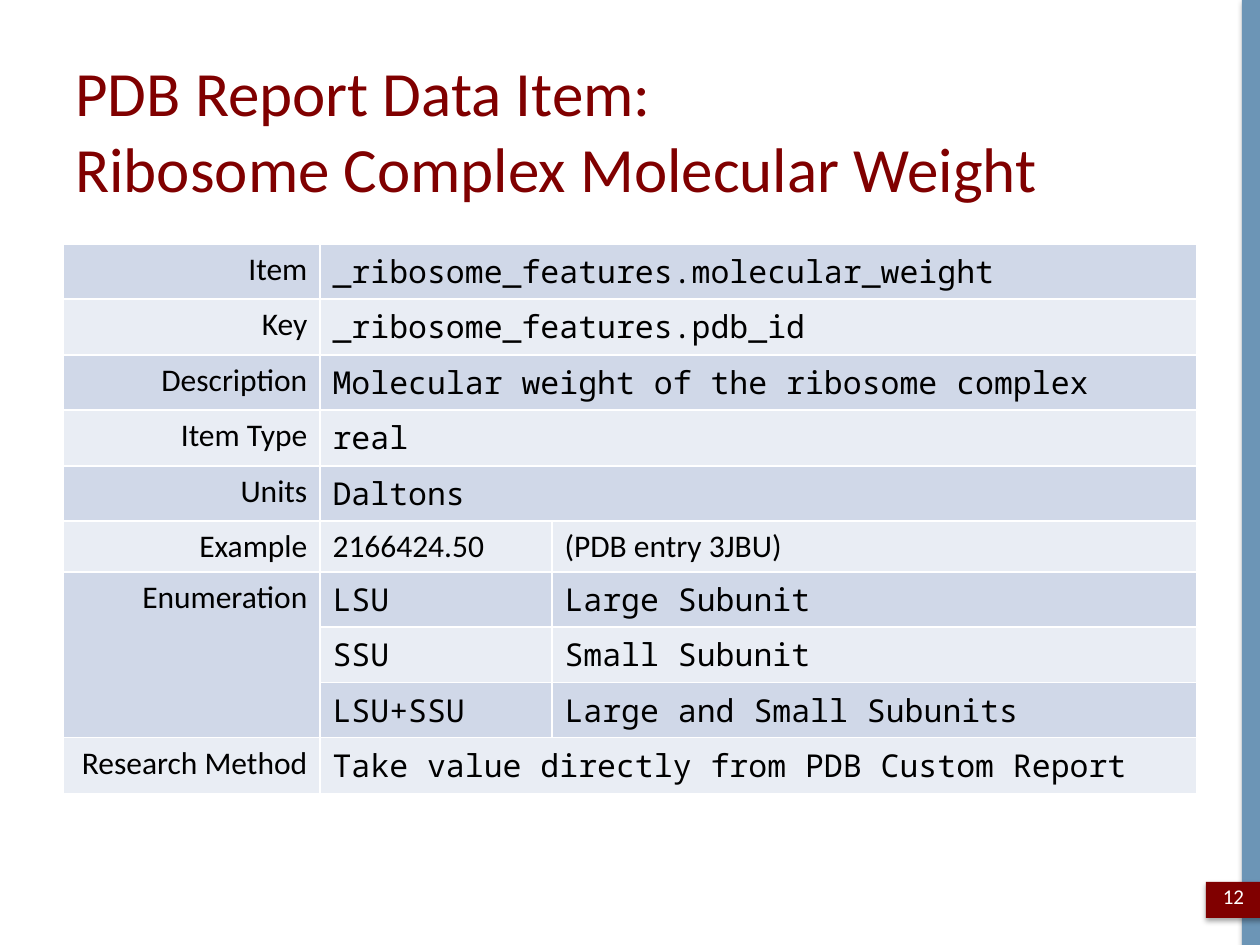
from lxml import etree
from pptx import Presentation
from pptx import util as u
from pptx.dml.color import RGBColor
from pptx.enum import shapes, text
from pptx.oxml import ns, parse_xml

PX_PER_INCH = 126
MAROON = RGBColor(0x80, 0x00, 0x00)
STEEL = RGBColor(0x6C, 0x95, 0xB6)
BAND_DARK = RGBColor(0xD0, 0xD8, 0xE8)
BAND_LIGHT = RGBColor(0xE9, 0xED, 0xF4)
WHITE = RGBColor(0xFF, 0xFF, 0xFF)
BLACK = RGBColor(0x00, 0x00, 0x00)
SANS = "Calibri"
MONO = "Noto Sans Mono"

COLUMN_WIDTHS = (257, 232, 645)
SANS_ROW_HEIGHT = 51
MONO_ROW_HEIGHTS = (55, 56)  # dark band, light band
# Label, value font, values; a single value spans both value columns,
# and an empty label continues the one above.
ROWS = (
    ("Item", MONO, ("_ribosome_features.molecular_weight",)),
    ("Key", MONO, ("_ribosome_features.pdb_id",)),
    ("Description", MONO, ("Molecular weight of the ribosome complex",)),
    ("Item Type", MONO, ("real",)),
    ("Units", MONO, ("Daltons",)),
    ("Example", SANS, ("2166424.50", "(PDB entry 3JBU)")),
    ("Enumeration", MONO, ("LSU", "Large Subunit")),
    ("", MONO, ("SSU", "Small Subunit")),
    ("", MONO, ("LSU+SSU", "Large and Small Subunits")),
    ("Research Method", MONO, ("Take value directly from PDB Custom Report",)),
)

SHADOW = (
    f'<a:outerShdw {ns.nsdecls("a")} blurRad="{u.Pt(3.1)}" dist="{u.Pt(1.8)}" '
    'dir="5400000" rotWithShape="0"><a:srgbClr val="000000">'
    '<a:alpha val="35000"/></a:srgbClr></a:outerShdw>'
)


def px(length):
    return u.Emu(round(length * u.Inches(1) / PX_PER_INCH))


def style(paragraph, size, font, color, align=text.PP_ALIGN.LEFT):
    paragraph.alignment = align
    paragraph.font.size = u.Pt(size)
    paragraph.font.name = font
    paragraph.font.color.rgb = color


def add_block(slide, box, color):
    """Add a filled rectangle with a soft shadow below it."""
    block = slide.shapes.add_shape(shapes.MSO_SHAPE.RECTANGLE, *map(px, box))
    block.fill.solid()
    block.fill.fore_color.rgb = color
    block.line.fill.background()
    block.shadow.inherit = False
    effects = block.element.spPr.find(ns.qn("a:effectLst"))
    effects.append(parse_xml(SHADOW))


def add_text(slide, box, words, size, color, align=text.PP_ALIGN.LEFT):
    frame = slide.shapes.add_textbox(*map(px, box)).text_frame
    frame.word_wrap = True
    frame.vertical_anchor = text.MSO_ANCHOR.MIDDLE
    frame.text = words
    style(frame.paragraphs[0], size, SANS, color, align)


def paint_cell(cell, color):
    """Give a cell white borders and a band colour."""
    properties = cell._tc.get_or_add_tcPr()
    for side in ("lnL", "lnR", "lnT", "lnB"):
        border = etree.SubElement(properties, ns.qn(f"a:{side}"), w=str(u.Pt(1)))
        fill = etree.SubElement(border, ns.qn("a:solidFill"))
        etree.SubElement(fill, ns.qn("a:srgbClr"), val=str(WHITE))
    cell.fill.solid()
    cell.fill.fore_color.rgb = color


def write_cell(cell, words, font, align=text.PP_ALIGN.LEFT):
    cell.text = words
    style(cell.text_frame.paragraphs[0], 18, font, BLACK, align)


def add_item_table(slide):
    heights = [SANS_ROW_HEIGHT if font == SANS else MONO_ROW_HEIGHTS[index % 2]
               for index, (_, font, _) in enumerate(ROWS)]
    box = (63, 244, sum(COLUMN_WIDTHS), sum(heights))
    table = slide.shapes.add_table(
        len(ROWS), len(COLUMN_WIDTHS), *map(px, box)).table
    table.first_row = False
    for column, width in zip(table.columns, COLUMN_WIDTHS):
        column.width = px(width)
    label_row = 0
    for index, (label, font, values) in enumerate(ROWS):
        table.rows[index].height = px(heights[index])
        for cell in table.rows[index].cells:
            paint_cell(cell, BAND_LIGHT if index % 2 else BAND_DARK)
            write_cell(cell, "", SANS)
        if label:
            label_row = index
            write_cell(table.cell(index, 0), label, SANS, text.PP_ALIGN.RIGHT)
        elif index + 1 == len(ROWS) or ROWS[index + 1][0]:
            table.cell(label_row, 0).merge(table.cell(index, 0))
        for column, value in enumerate(values, start=1):
            write_cell(table.cell(index, column), value, font)
        if len(values) == 1:
            table.cell(index, 1).merge(table.cell(index, 2))


def main():
    deck = Presentation()
    deck.slide_width, deck.slide_height = px(1260), px(945)
    slide = deck.slides.add_slide(deck.slide_layouts[6])
    add_block(slide, (1242, 0, 18, 945), STEEL)
    add_block(slide, (1206, 882, 60, 36), MAROON)
    add_text(slide, (63, 38, 1170, 182),
             "PDB Report Data Item:\vRibosome Complex Molecular Weight", 36, MAROON)
    add_text(slide, (1205, 871, 57, 50), "12", 12, WHITE, text.PP_ALIGN.CENTER)
    add_item_table(slide)
    deck.save("out.pptx")


if __name__ == "__main__":
    main()
